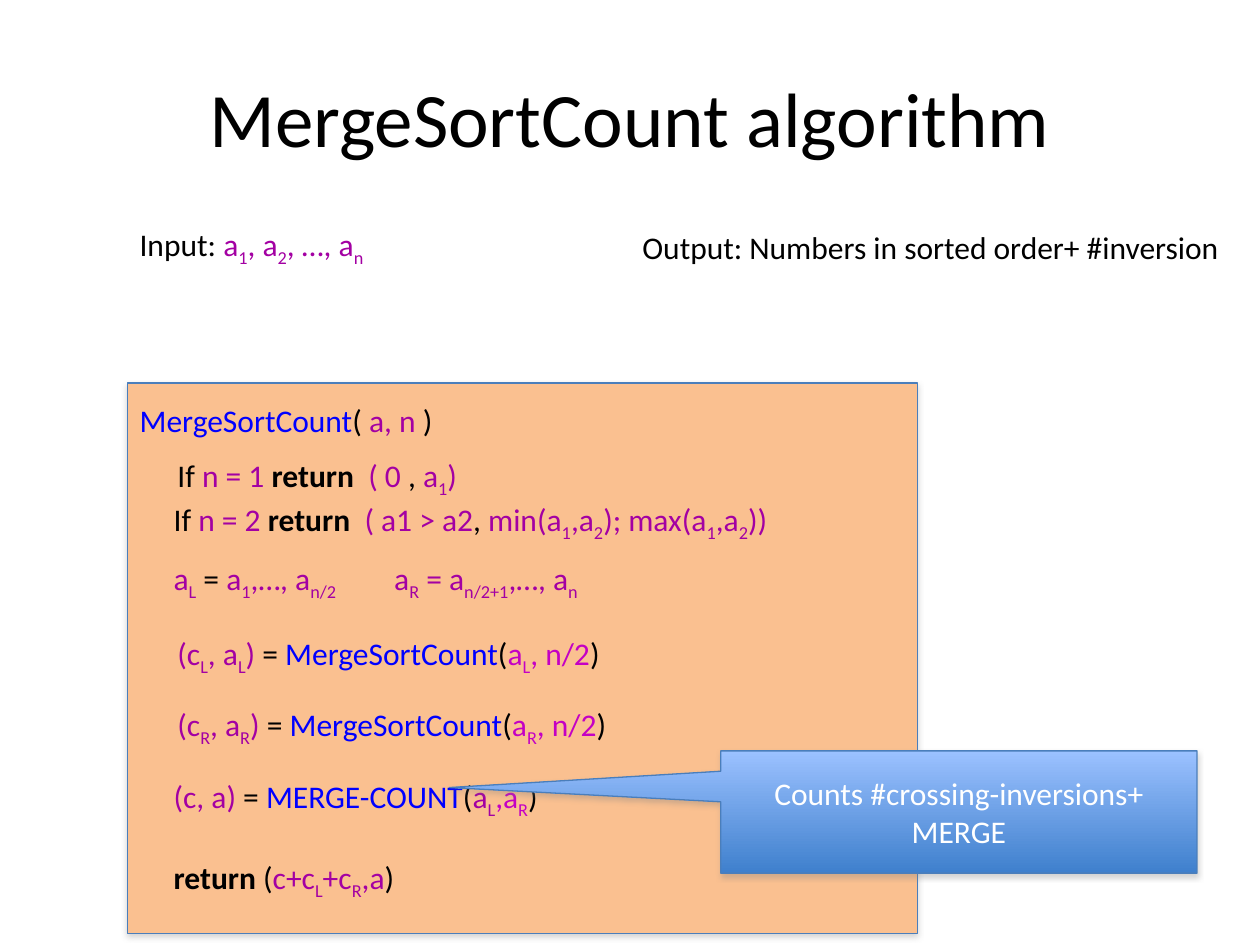
"""Build the MergeSortCount algorithm slide."""
from dataclasses import dataclass

import lxml.etree
import pptx
import pptx.dml.color
import pptx.enum.shapes
import pptx.enum.text
import pptx.oxml.ns
import pptx.util

CELL = pptx.util.Inches(0.1)
COLUMNS, ROWS = 100, 75
LINE_ROWS = 4
MARGIN, INDENT, CALL_INDENT = 10.1, 12.8, 13.1
CALL_TOP, CALL_STEP = 49.8, 5.7


@dataclass(frozen=True)
class Theme:
    """Colours, font and type sizes of the slide."""
    font: str = "Calibri"
    title: int = 44
    body: int = 18
    black: str = "000000"
    white: str = "FFFFFF"
    value: str = "A300A3"
    argument: str = "C400C4"
    function: str = "0000FF"
    panel: str = "FAC090"
    outline: str = "4A7EBB"
    callout: tuple[str, str] = ("9BC1FF", "3F80CD")
    shadow: str = "808080"


THEME = Theme()


@dataclass(frozen=True)
class Span:
    """Text of one colour, with subscripts in braces."""
    text: str
    color: str = THEME.black
    bold: bool = False


@dataclass(frozen=True)
class Area:
    """A rectangle in grid columns and rows."""
    column: float
    row: float
    columns: float
    rows: float = LINE_ROWS

    def lengths(self) -> list[int]:
        """Return left, top, width and height in EMU."""
        return [round(n * CELL) for n in (self.column, self.row, self.columns, self.rows)]


@dataclass(frozen=True)
class Line:
    """A line of text and its place."""
    area: Area
    spans: tuple[Span, ...]


def value(text: str) -> Span:
    """Return a span in the colour of values."""
    return Span(text, THEME.value)


def rgb(color: str) -> pptx.dml.color.RGBColor:
    """Return the colour object of a hex code."""
    return pptx.dml.color.RGBColor.from_string(color)


def write(frame, spans: tuple[Span, ...], *, size: int = THEME.body,
          centred: bool = False, wrap: bool = False) -> None:
    """Write spans as one paragraph, lowering what stands in braces."""
    frame.word_wrap = wrap
    if centred:
        frame.vertical_anchor = pptx.enum.text.MSO_ANCHOR.MIDDLE
    if not wrap:
        frame.auto_size = pptx.enum.text.MSO_AUTO_SIZE.SHAPE_TO_FIT_TEXT
    paragraph = frame.paragraphs[0]
    align = pptx.enum.text.PP_ALIGN
    paragraph.alignment = align.CENTER if centred else align.LEFT
    for span in spans:
        for index, piece in enumerate(span.text.replace("}", "{").split("{")):
            if not piece:
                continue
            run = paragraph.add_run()
            run.text = piece
            run.font.name, run.font.size = THEME.font, pptx.util.Pt(size)
            run.font.bold = span.bold
            run.font.color.rgb = rgb(span.color)
            if index % 2:
                run.font._element.set("baseline", "-25000")


def add_line(slide, line: Line, **style) -> None:
    """Add a text box holding one line."""
    write(slide.shapes.add_textbox(*line.area.lengths()).text_frame, line.spans, **style)


def add_block(slide, kind, area: Area, fills: tuple[str, ...]):
    """Add an outlined shape with a soft shadow and a plain or graded fill."""
    block = slide.shapes.add_shape(kind, *area.lengths())
    if len(fills) == 1:
        block.fill.solid()
        block.fill.fore_color.rgb = rgb(fills[0])
    else:
        block.fill.gradient()
        block.fill.gradient_angle = 270
        for stop, color in zip(block.fill.gradient_stops, fills):
            stop.color.rgb = rgb(color)
    block.line.color.rgb = rgb(THEME.outline)
    block.line.width = pptx.util.Pt(0.75)
    block.shadow.inherit = False
    qn = pptx.oxml.ns.qn
    effects = block._element.spPr.find(qn("a:effectLst"))
    shadow = lxml.etree.SubElement(effects, qn("a:outerShdw"), blurRad="40000",
                                   dist="23000", dir="5400000", rotWithShape="0")
    tint = lxml.etree.SubElement(shadow, qn("a:srgbClr"), val=THEME.shadow)
    lxml.etree.SubElement(tint, qn("a:alpha"), val="35000")
    return block


def recursive_call(index: int, half: str, columns: float) -> Line:
    """Return the recursive call on one half of the input."""
    return Line(Area(CALL_INDENT, CALL_TOP + index * CALL_STEP, columns), (
        value(f"(c{{{half}}}, a{{{half}}}) "), Span("= "),
        Span("MergeSortCount", THEME.function), Span("("),
        Span(f"a{{{half}}}, n/2", THEME.argument), Span(")")))


LINES = (
    Line(Area(MARGIN, 17.4, 20.7), (Span("Input: "), value("a{1}, a{2}, …, a{n}"))),
    Line(Area(50, 17.6, 48.2), (Span("Output: Numbers in sorted order+ #inversion"),)),
    Line(Area(MARGIN, 31.3, 25.5), (
        Span("MergeSortCount", THEME.function), Span("( "), value("a, n "), Span(")"))),
    Line(Area(CALL_INDENT, 35.7, 24.5), (
        Span("If "), value("n = 1 "), Span("return  ", bold=True),
        value("( 0 "), Span(", "), value("a{1})"))),
    Line(Area(INDENT, 39.2, 50.9), (
        Span("If "), value("n = 2 "), Span("return  ", bold=True), value("( a1 > a2"),
        Span(", "), value("min(a{1},a{2}); max(a{1},a{2}))"))),
    Line(Area(INDENT, 43.9, 15.6), (value("a{L}"), Span(" = "), value("a{1},…, a{n/2}"))),
    Line(Area(30.3, 43.9, 17.5), (value("a{R} = a{n/2+1},…, a{n}"),)),
    recursive_call(0, "L", 36.1),
    recursive_call(1, "R", 36.7),
    Line(Area(INDENT, CALL_TOP + 2 * CALL_STEP, 31.4), (
        value("(c, a) "), Span("= "), Span("MERGE-COUNT", THEME.function), Span("("),
        value("a{L}"), Span(",a{R}", THEME.argument), Span(")"))),
    Line(Area(INDENT, 67.6, 19.9), (
        Span("return", bold=True), Span(" ("), value("c+c{L}+c{R},a"), Span(")"))),
)


def main() -> None:
    """Build and save the slide."""
    deck = pptx.Presentation()
    deck.slide_width, deck.slide_height = COLUMNS * CELL, ROWS * CELL
    slide = deck.slides.add_slide(deck.slide_layouts[6])
    kinds = pptx.enum.shapes.MSO_SHAPE
    add_block(slide, kinds.RECTANGLE, Area(MARGIN, 30.4, 62.7, 43.7), (THEME.panel,))
    title = Line(Area(5, 3, 90, 12.5), (Span("MergeSortCount algorithm"),))
    add_line(slide, title, size=THEME.title, centred=True, wrap=True)
    for line in LINES:
        add_line(slide, line)
    callout = add_block(slide, kinds.RECTANGULAR_CALLOUT,
                        Area(57.2, 59.6, 37.8, 9.7), THEME.callout)
    callout.adjustments[0], callout.adjustments[1] = -1.07, -0.2
    write(callout.text_frame, (Span("Counts #crossing-inversions+ MERGE", THEME.white),),
          centred=True, wrap=True)
    deck.save("out.pptx")


if __name__ == "__main__":
    main()
